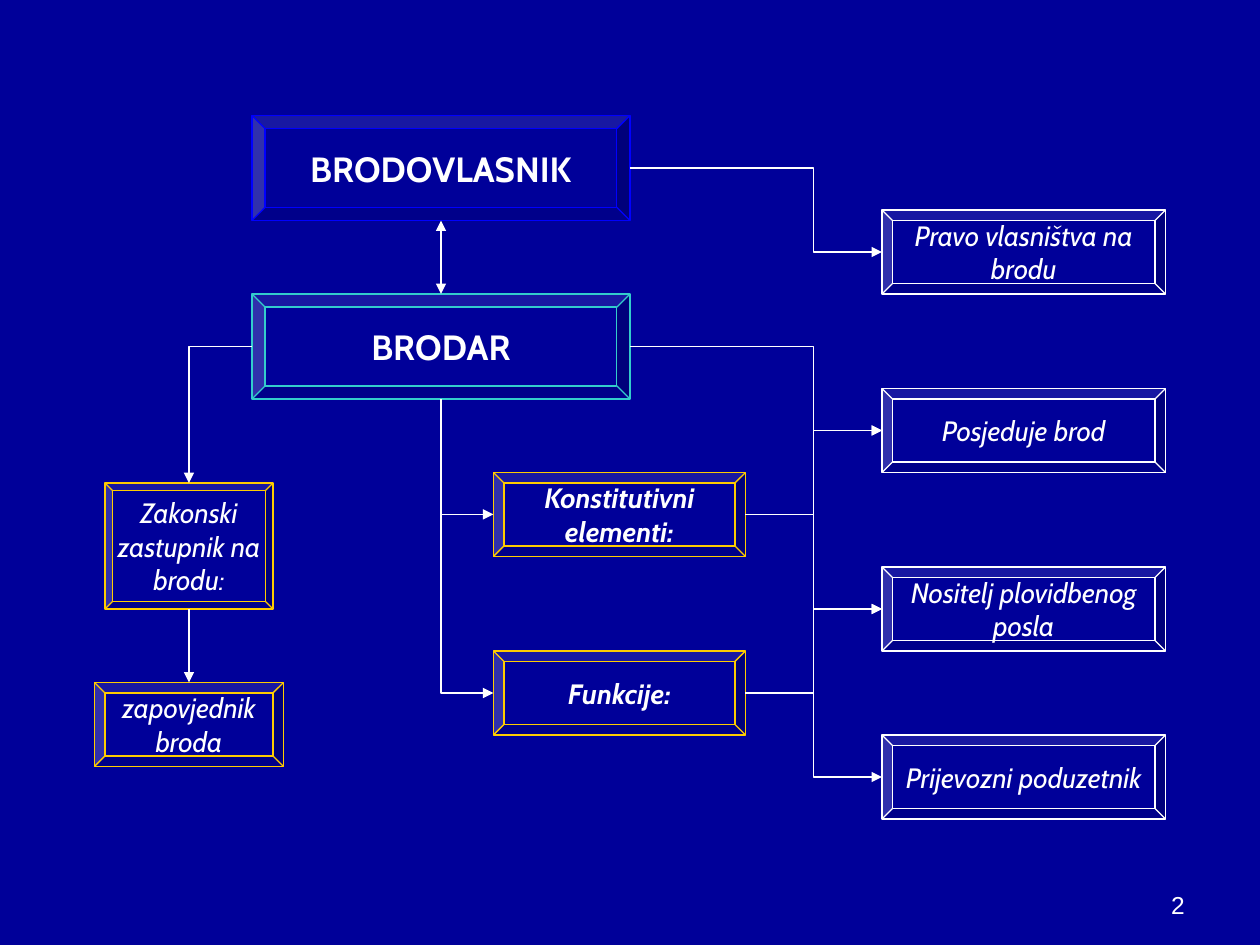
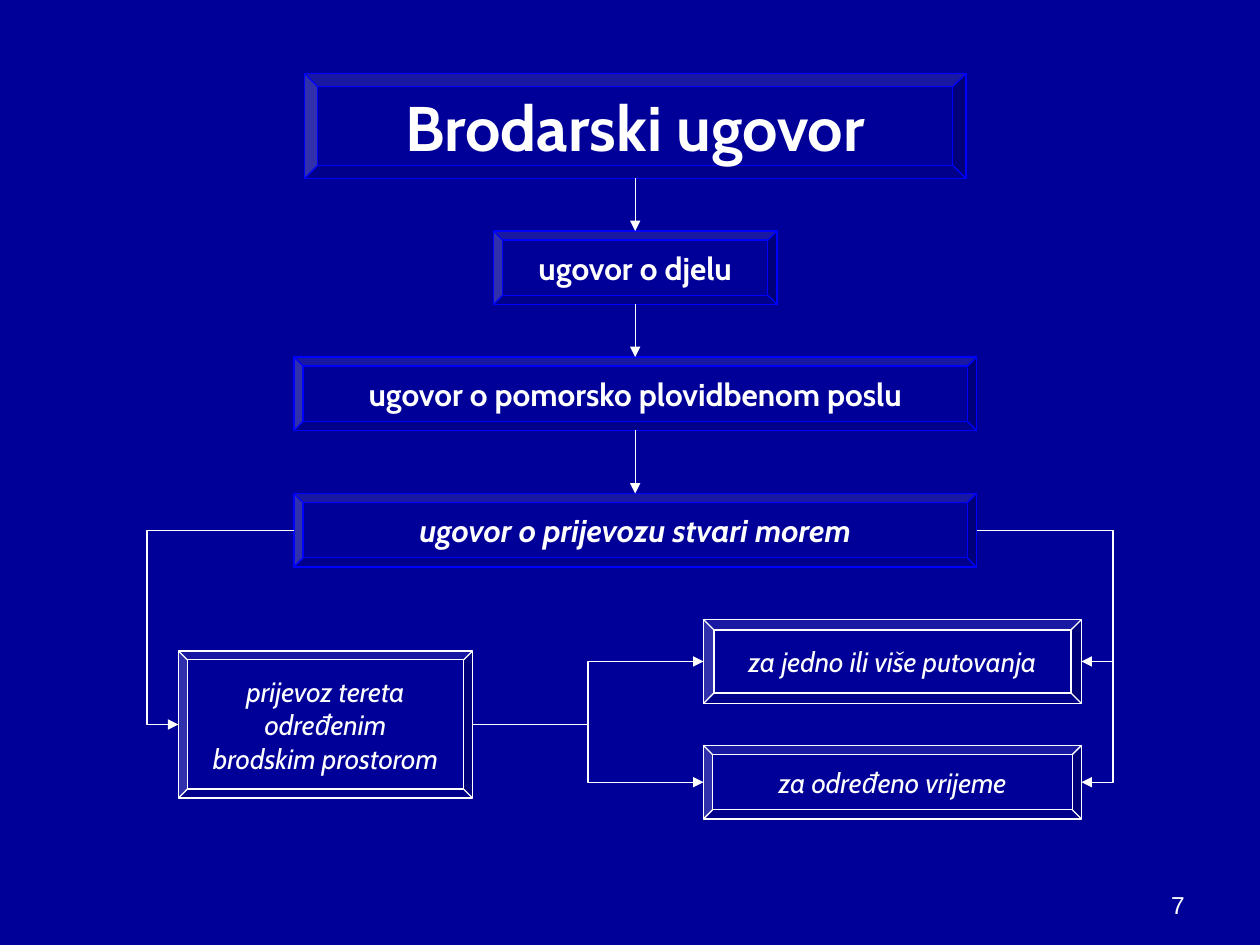
"""Build two flow charts about shipowners, ship operators and their contracts."""
from pptx import Presentation
from pptx.dml.color import RGBColor
from pptx.enum.shapes import MSO_CONNECTOR, MSO_SHAPE
from pptx.enum.text import MSO_ANCHOR, PP_ALIGN
from pptx.oxml.ns import qn
from pptx.util import Pt
from lxml import etree

PX = 7620
NAVY = RGBColor(0x00, 0x00, 0x99)
BLUE = RGBColor(0x00, 0x00, 0xFF)
TEAL = RGBColor(0x33, 0xCC, 0xCC)
GOLD = RGBColor(0xFF, 0xCC, 0x00)
WHITE = RGBColor(0xFF, 0xFF, 0xFF)
BEVEL = MSO_SHAPE.BEVEL
STRAIGHT = MSO_CONNECTOR.STRAIGHT
ELBOW = MSO_CONNECTOR.ELBOW
MIDDLE = MSO_ANCHOR.MIDDLE
BOTTOM = MSO_ANCHOR.BOTTOM
CENTER = PP_ALIGN.CENTER
RIGHT = PP_ALIGN.RIGHT
LINE_WIDTH = Pt(0.75)
BLANK_LAYOUT = 6


def write_text(frame, text, size, font="Cabin", align=CENTER, bold=False, italic=False):
    """Put white text in a frame, one paragraph for each line."""
    frame.text = text
    for para in frame.paragraphs:
        para.alignment = align
        for span in para.runs:
            span.font.name = font
            span.font.size = Pt(size)
            span.font.bold = bold
            span.font.italic = italic
            span.font.color.rgb = WHITE


def add_page(deck, number):
    """Add a blank page with its number at the bottom right."""
    page = deck.slides.add_slide(deck.slide_layouts[BLANK_LAYOUT])
    box = page.shapes.add_textbox(860 * PX, 820 * PX, 280 * PX, 62 * PX)
    frame = box.text_frame
    frame.word_wrap = True
    frame.vertical_anchor = BOTTOM
    write_text(frame, str(number), 14, font="Arial", align=RIGHT)
    return page


def add_box(page, text, place, color, size=16, bold=False, italic=True, wrap=True, edge=0.125):
    """Add a bevelled box with a half transparent fill and centred text."""
    box = page.shapes.add_shape(BEVEL, *(length * PX for length in place))
    box.adjustments[0] = edge
    box.shadow.inherit = False
    box.fill.solid()
    box.fill.fore_color.rgb = NAVY
    paint = box.element.spPr.find(qn("a:solidFill"))[0]
    etree.SubElement(paint, qn("a:alpha"), val="48000")
    box.line.color.rgb = color
    box.line.width = LINE_WIDTH
    frame = box.text_frame
    frame.margin_left = frame.margin_right = frame.margin_top = frame.margin_bottom = 0
    frame.word_wrap = wrap
    frame.vertical_anchor = MIDDLE
    write_text(frame, text, size, bold=bold, italic=italic)
    return box


def side(box, name):
    """Return the middle point of one side of a box."""
    center = box.left + box.width // 2
    middle = box.top + box.height // 2
    return {
        "left": (box.left, middle),
        "right": (box.left + box.width, middle),
        "top": (center, box.top),
        "bottom": (center, box.top + box.height),
    }[name]


def add_link(page, kind, start, end, arrows=("tailEnd",)):
    """Add a thin white connector with triangular arrowheads."""
    link = page.shapes.add_connector(kind, *start, *end)
    link.line.color.rgb = WHITE
    link.line.width = LINE_WIDTH
    properties = link.element.spPr
    for arrow in arrows:
        etree.SubElement(properties.find(qn("a:ln")), qn(f"a:{arrow}"), type="triangle")
    etree.SubElement(properties, qn("a:effectLst"))
    return link


def add_elbow(page, start, end, bend):
    """Add a connector that turns twice, at the horizontal position bend."""
    link = add_link(page, ELBOW, start, end)
    share = (bend * PX - start[0]) / (end[0] - start[0])
    guides = link.element.spPr.find(qn("a:prstGeom")).find(qn("a:avLst"))
    etree.SubElement(guides, qn("a:gd"), name="adj1", fmla=f"val {round(share * 100000)}")


def add_corner(page, start, end, arrow="tailEnd"):
    """Add a connector that leaves start horizontally and turns once."""
    link = add_link(page, ELBOW, start, end, (arrow,))
    link.element.spPr.find(qn("a:prstGeom")).set("prst", "bentConnector2")


def build_operator_page(deck):
    """Show the owner and the operator with their roles."""
    page = add_page(deck, 2)
    owner = add_box(page, "BRODOVLASNIK", (240, 110, 360, 100), BLUE, 20, True, False, wrap=False)
    operator = add_box(page, "BRODAR", (240, 280, 360, 100), TEAL, 20, True, False)
    rights = (
        ("Pravo vlasništva na brodu", 200),
        ("Posjeduje brod", 370),
        ("Nositelj plovidbenog posla", 540),
        ("Prijevozni poduzetnik", 700),
    )
    ownership, possession, business, carrier = [
        add_box(page, text, (840, top, 270, 80), WHITE) for text, top in rights
    ]
    elements, functions = [
        add_box(page, text, (470, top, 240, 80), GOLD, bold=True)
        for text, top in (("Konstitutivni elementi:", 450), ("Funkcije:", 620))
    ]
    agent = add_box(page, "Zakonski zastupnik na brodu:", (100, 460, 160, 120), GOLD, edge=0.06)
    master = add_box(page, "zapovjednik broda", (90, 650, 180, 80), GOLD)

    links = (
        (owner, ownership),
        (operator, possession),
        (elements, possession),
        (elements, business),
        (functions, business),
        (functions, carrier),
    )
    for source, target in links:
        add_elbow(page, side(source, "right"), side(target, "left"), 775)
    for target in (elements, functions):
        add_corner(page, side(target, "left"), side(operator, "bottom"), "headEnd")
    add_corner(page, side(operator, "left"), side(agent, "top"))
    add_link(page, STRAIGHT, side(owner, "bottom"), side(operator, "top"), ("headEnd", "tailEnd"))
    add_link(page, STRAIGHT, side(agent, "bottom"), side(master, "top"))


def build_contract_page(deck):
    """Show how the operator's contract divides into kinds."""
    page = add_page(deck, 7)
    levels = (
        ("Brodarski ugovor", (290, 70, 630, 100), 36, False),
        ("ugovor o djelu", (470, 220, 270, 70), 18, False),
        ("ugovor o pomorsko plovidbenom poslu", (280, 340, 650, 70), 18, False),
        ("ugovor o prijevozu stvari morem", (280, 470, 650, 70), 18, True),
    )
    chain = [
        add_box(page, text, place, BLUE, size, True, italic, wrap=False)
        for text, place, size, italic in levels
    ]
    for upper, lower in zip(chain, chain[1:]):
        add_link(page, STRAIGHT, side(upper, "bottom"), side(lower, "top"))

    carriage = chain[-1]
    cargo = add_box(page, "prijevoz tereta određenim\nbrodskim prostorom",
                    (170, 620, 280, 140), WHITE, edge=0.06)
    voyage = add_box(page, "za jedno ili više putovanja", (670, 590, 360, 80), WHITE)
    period = add_box(page, "za određeno vrijeme", (670, 710, 360, 70), WHITE)
    add_elbow(page, side(carriage, "left"), side(cargo, "left"), 140)
    for kind in (voyage, period):
        add_elbow(page, side(carriage, "right"), side(kind, "right"), 1060)
        add_elbow(page, side(cargo, "right"), side(kind, "left"), 560)


def main():
    """Create the deck and save it."""
    deck = Presentation()
    deck.slide_width = 1200 * PX
    deck.slide_height = 900 * PX
    background = deck.slide_master.background.fill
    background.solid()
    background.fore_color.rgb = NAVY
    build_operator_page(deck)
    build_contract_page(deck)
    deck.save("out.pptx")


if __name__ == "__main__":
    main()
